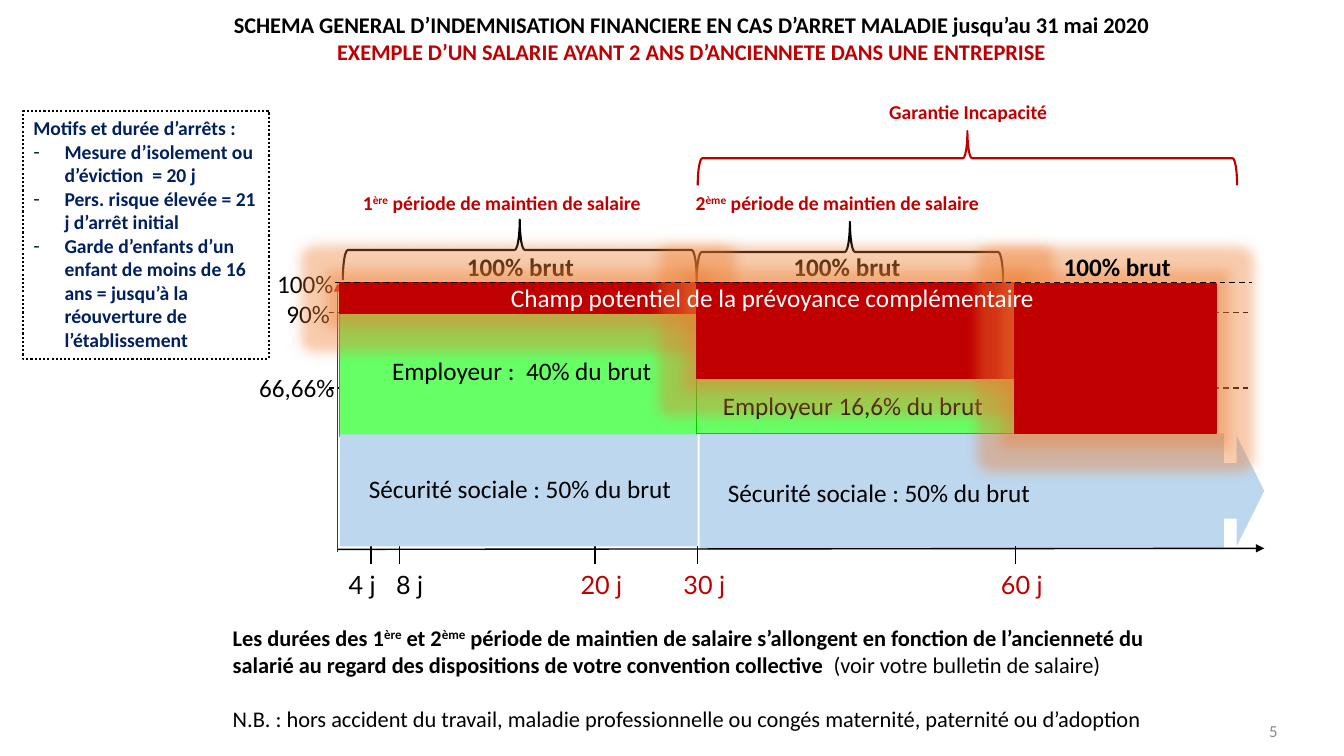
from lxml import etree
from pptx import Presentation
from pptx.dml.color import RGBColor
from pptx.enum.dml import MSO_LINE
from pptx.enum.shapes import MSO_CONNECTOR, MSO_SHAPE
from pptx.enum.text import MSO_ANCHOR, MSO_AUTO_SIZE, PP_ALIGN
from pptx.oxml.ns import qn
from pptx.util import Inches, Pt

COLORS = {
    "black": "000000",
    "white": "FFFFFF",
    "red": "C00000",
    "navy": "002060",
    "grey": "898989",
    "blue": "BDD7EE",
    "green": "66FF66",
    "green_edge": "00CC00",
    "glow": "ED7D31",
}
SOCIAL_SECURITY = "Sécurité sociale : 50% du brut"
PERIOD = " période de maintien de salaire"
FULL_PAY = "100% brut"
ORIGIN, DAY_30, DAY_60 = 3.37, 6.91, 10.06
TOP = 2.81
TICK_TOP, TICK_LENGTH = 5.42, 0.18


def rgb(name):
    return RGBColor.from_string(COLORS[name])


def inches(*lengths):
    return [Inches(length) for length in lengths]


def style(paragraph, size, color="black", bold=False, align=PP_ALIGN.LEFT, font="Calibri"):
    paragraph.alignment = align
    paragraph.font.name = font
    paragraph.font.size = Pt(size)
    paragraph.font.bold = bold
    paragraph.font.color.rgb = rgb(color)


def prepare(frame, anchor=MSO_ANCHOR.TOP):
    frame.word_wrap = True
    frame.auto_size = MSO_AUTO_SIZE.NONE
    frame.vertical_anchor = anchor


def add_ordinals(paragraph, *parts):
    """Add runs that alternate between normal and superscript text."""
    for index, part in enumerate(parts):
        run = paragraph.add_run()
        run.text = part
        if index % 2:
            run._r.get_or_add_rPr().set("baseline", "30000")


def add_label(slide, box, *parts, size=18, inset=True, anchor=MSO_ANCHOR.TOP, **look):
    frame = slide.shapes.add_textbox(*inches(*box)).text_frame
    prepare(frame, anchor)
    if not inset:
        frame.margin_left = frame.margin_right = frame.margin_top = frame.margin_bottom = 0
    add_ordinals(frame.paragraphs[0], *parts)
    style(frame.paragraphs[0], size, **look)


def add_block(slide, box, fill, edge=None, preset=MSO_SHAPE.RECTANGLE, text=None):
    block = slide.shapes.add_shape(preset, *inches(*box))
    block.shadow.inherit = False
    block.fill.solid()
    block.fill.fore_color.rgb = rgb(fill)
    if edge:
        block.line.color.rgb = rgb(edge)
        block.line.width = Pt(1)
    else:
        block.line.fill.background()
    if text:
        prepare(block.text_frame)
        block.text_frame.text = text
        style(block.text_frame.paragraphs[0], 18)
    return block


def add_glow(block):
    effects = block._element.spPr.find(qn("a:effectLst"))
    glow = etree.SubElement(effects, qn("a:glow"), rad=str(Pt(18)))
    color = etree.SubElement(glow, qn("a:srgbClr"), val=COLORS["glow"])
    etree.SubElement(color, qn("a:alpha"), val="40000")


def add_line(slide, start, end, color="black", dashed=False, arrow=False):
    connector = slide.shapes.add_connector(MSO_CONNECTOR.STRAIGHT, *inches(*start, *end))
    connector.line.color.rgb = rgb(color)
    connector.line.width = Pt(1)
    if dashed:
        connector.line.dash_style = MSO_LINE.DASH
    if arrow:
        etree.SubElement(connector.line._get_or_add_ln(), qn("a:tailEnd"), type="triangle")
    etree.SubElement(connector._element.spPr, qn("a:effectLst"))


def add_brace(slide, left, top, width, height, color):
    """Draw a brace pointing up; the box is the one it visibly fills."""
    frame = (left + (width - height) / 2, top + (height - width) / 2, height, width)
    brace = slide.shapes.add_shape(MSO_SHAPE.RIGHT_BRACE, *inches(*frame))
    brace.rotation = 270
    brace.shadow.inherit = False
    brace.fill.background()
    brace.line.color.rgb = rgb(color)
    brace.line.width = Pt(1.5)


def place(placeholder, *box):
    placeholder.left, placeholder.top, placeholder.width, placeholder.height = inches(*box)
    prepare(placeholder.text_frame)


def fill_title(title):
    place(title, 1.27, 0.06, 11.18, 0.64)
    title.text_frame.text = (
        "SCHEMA GENERAL D’INDEMNISATION FINANCIERE EN CAS D’ARRET MALADIE jusqu’au 31 mai 2020\n"
        "EXEMPLE D’UN SALARIE AYANT 2 ANS D’ANCIENNETE DANS UNE ENTREPRISE"
    )
    for paragraph, color in zip(title.text_frame.paragraphs, ("black", "red")):
        style(paragraph, 16, color, bold=True, align=PP_ALIGN.CENTER)


def fill_reasons(reasons):
    place(reasons, 0.23, 1.1, 2.44, 2.46)
    reasons.line.color.rgb = rgb("black")
    reasons.line.width = Pt(1.5)
    reasons.line.dash_style = MSO_LINE.ROUND_DOT
    reasons.text_frame.text = "\n".join((
        "Motifs et durée d’arrêts :",
        "Mesure d’isolement ou d’éviction  = 20 j",
        "Pers. risque élevée = 21 j d’arrêt initial",
        "Garde d’enfants d’un enfant de moins de 16 ans = jusqu’à la réouverture de l’établissement",
    ))
    for index, paragraph in enumerate(reasons.text_frame.paragraphs):
        style(paragraph, 14, "navy", bold=True)
        paragraph.space_before = Pt(0)
        indent = Inches(0.31) if index else 0
        properties = paragraph._p.get_or_add_pPr()
        properties.set("marL", str(indent))
        properties.set("indent", str(-indent))
        if index:
            etree.SubElement(properties, qn("a:buChar"), char="-")
        else:
            etree.SubElement(properties, qn("a:buNone"))


def add_time_axis(slide):
    days = (
        ("4 j", 3.68, 3.36, "black"),
        ("8 j", 3.96, 3.83, "black"),
        ("20 j", 5.9, 5.66, "red"),
        ("30 j", 6.92, 6.68, "red"),
        ("60 j", 10.07, 9.83, "red"),
    )
    for day, tick, left, color in days:
        add_line(slide, (tick, TICK_TOP), (tick, TICK_TOP + TICK_LENGTH))
        add_label(slide, (left, 5.6, 0.67, 0.4), day, color=color, font="Lato")
    add_line(slide, (3.35, 5.48), (3.35, TOP), color="red", arrow=True)
    add_line(slide, (3.35, 5.45), (12.54, 5.44), arrow=True)


def add_payers(slide):
    add_block(slide, (ORIGIN, 3.1, 3.54, 1.23), "green", "green_edge")
    add_block(slide, (ORIGIN, 4.31, 3.55, 1.11), "blue")
    add_block(slide, (3.56, 4.65, 3.28, 0.4), "blue", text=SOCIAL_SECURITY)
    arrow = add_block(slide, (11.28, 4.32, 1.26, 1.1), "blue", preset=MSO_SHAPE.RIGHT_ARROW)
    arrow.adjustments[1] = 0.25
    add_block(slide, (DAY_30, 3.75, 3.15, 0.55), "green", "green_edge")
    add_label(slide, (6.96, 3.82, 3, 0.4), "Employeur 16,6% du brut", align=PP_ALIGN.CENTER)
    add_label(slide, (3.79, 3.48, 2.99, 0.4), "Employeur :  40% du brut")
    add_block(slide, (7.12, 4.69, 3.55, 0.4), "blue", text=SOCIAL_SECURITY)


def add_periods(slide):
    add_brace(slide, 6.92, 1.3, 5.35, 0.54, "red")
    add_brace(slide, 3.4, 2.18, 3.51, 0.6, "black")
    add_brace(slide, 6.91, 2.2, 3.04, 0.6, "black")
    heading = {"size": 14, "color": "red", "bold": True}
    add_label(slide, (3.5, 1.84, 3.02, 0.34), "1", "ère", PERIOD, **heading)
    add_label(slide, (6.8, 1.84, 3.15, 0.34), "2", "ème", PERIOD, **heading)
    add_label(slide, (8.72, 0.94, 1.99, 0.34), "Garantie Incapacité", **heading)


def add_complementary_cover(slide):
    for left, width, height in ((ORIGIN, 3.54, 0.3), (DAY_30, 3.16, 0.94), (DAY_60, 2, 1.49)):
        add_glow(add_block(slide, (left, TOP, width, height), "red", "red"))
    add_line(slide, (3.32, 2.8), (12.42, 2.8), dashed=True)
    add_label(slide, (10.55, 2.49, 1.64, 0.3), FULL_PAY, inset=False, bold=True)
    add_label(slide, (4.97, 2.75, 5.86, 0.4),
              "Champ potentiel de la prévoyance complémentaire", color="white")


def add_notice(slide):
    frame = slide.shapes.add_textbox(*inches(2.21, 6.14, 9.89, 1.18)).text_frame
    prepare(frame)
    durations, exclusions = frame.paragraphs[0], frame.add_paragraph()
    add_ordinals(
        durations, "Les durées des 1", "ère", " et 2", "ème",
        PERIOD + " s’allongent en fonction de l’ancienneté du salarié au regard"
        " des dispositions de votre convention collective  ")
    style(durations, 16, bold=True)
    payslip = durations.add_run()
    payslip.text = "(voir votre bulletin de salaire)"
    payslip.font.bold = False
    exclusions.text = ("N.B. : hors accident du travail, maladie professionnelle"
                       " ou congés maternité, paternité ou d’adoption")
    style(exclusions, 16)
    exclusions.space_before = Pt(19.5)


def main():
    deck = Presentation()
    deck.slide_width, deck.slide_height = inches(13.33, 7.5)
    slide = deck.slides.add_slide(deck.slide_layouts[1])
    fill_title(slide.shapes.title)
    fill_reasons(slide.placeholders[1])
    add_block(slide, (6.94, 4.3, 5.2, 1.15), "blue")
    add_label(slide, (12.1, 7, 0.67, 0.5), "5", size=12, color="grey",
              align=PP_ALIGN.RIGHT, anchor=MSO_ANCHOR.MIDDLE)
    add_time_axis(slide)
    for level in (3.1, 3.85):
        add_line(slide, (3.26, level), (12.42, level), dashed=True)
    add_payers(slide)
    add_periods(slide)
    for rate, left, top in (("100%", 2.75, 2.66), ("90%", 2.84, 2.96), ("66,66%", 2.57, 3.69)):
        add_label(slide, (left, top, 0.87, 0.3), rate, inset=False)
    for left in (4.63, 7.87):
        add_label(slide, (left, 2.49, 1.64, 0.3), FULL_PAY, inset=False, bold=True)
    add_complementary_cover(slide)
    add_notice(slide)
    deck.save("out.pptx")


if __name__ == "__main__":
    main()
